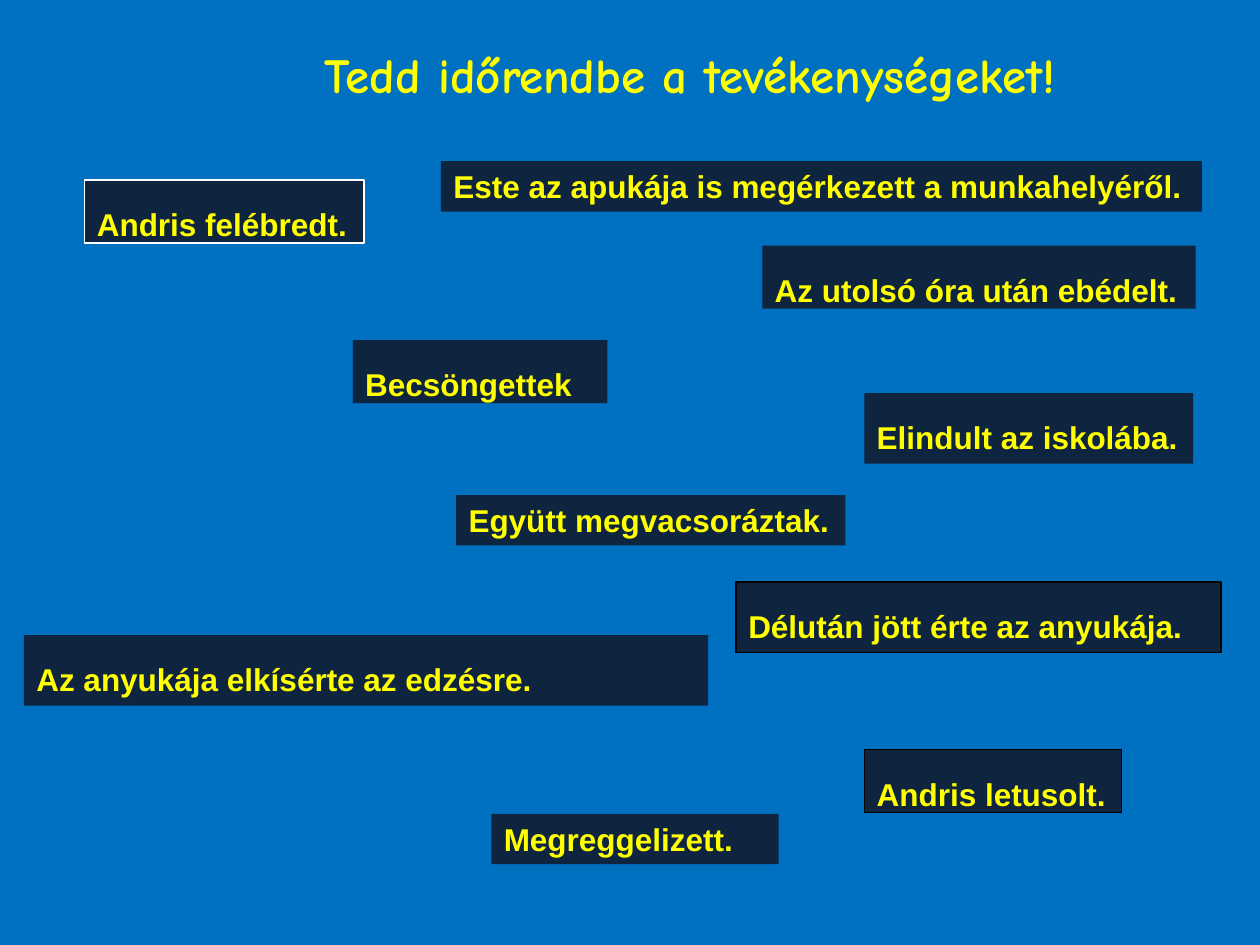
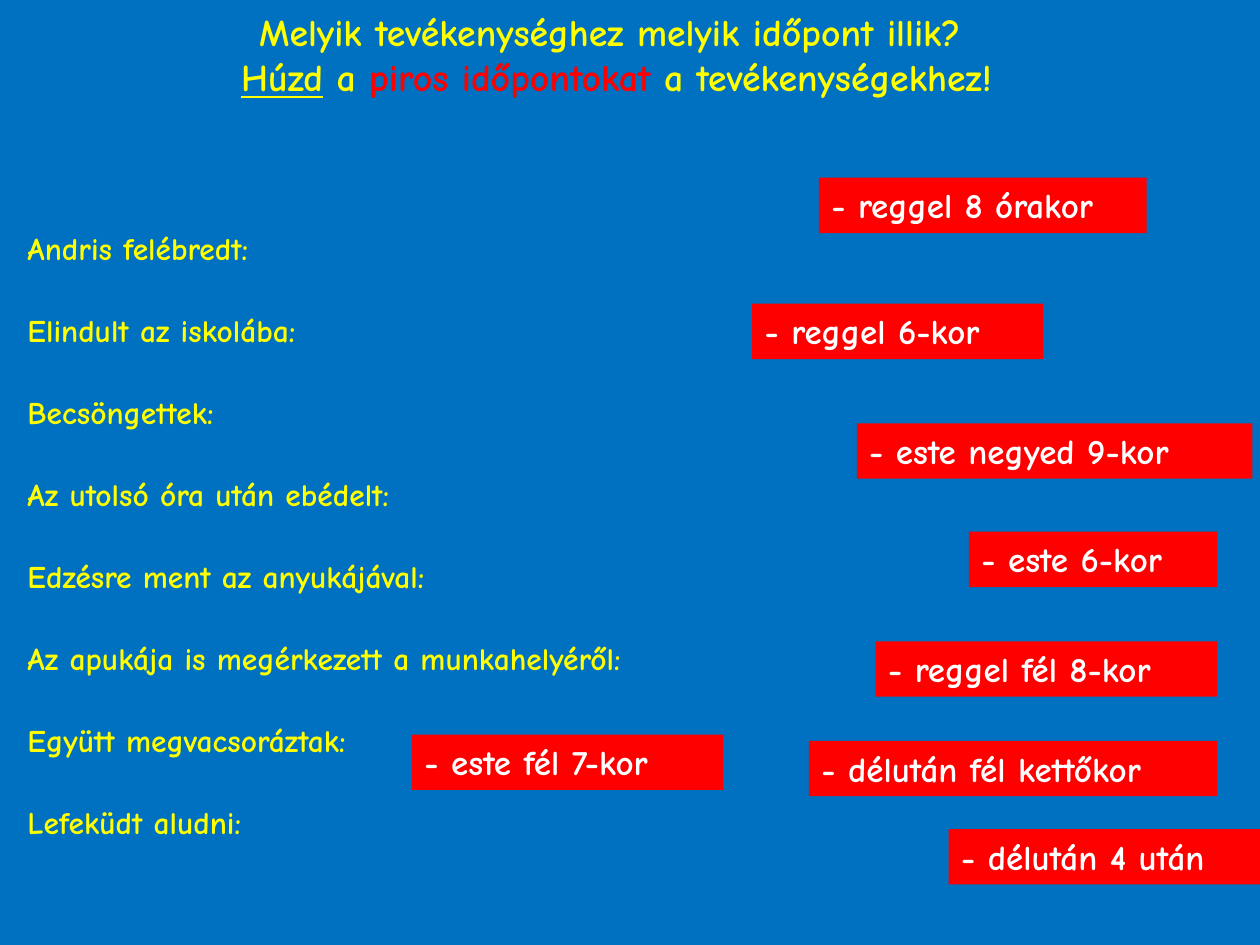
"""Build two slides about ordering and timing Andris's day."""
from pptx import Presentation
from pptx.dml.color import RGBColor
from pptx.enum.shapes import MSO_SHAPE as Shape
from pptx.enum.text import MSO_ANCHOR as Anchor, PP_ALIGN as Align
from pptx.util import Inches, Pt

BLUE = RGBColor(0x00, 0x70, 0xC0)
NAVY = RGBColor(0x0F, 0x24, 0x3E)
YELLOW = RGBColor(0xFF, 0xFF, 0x00)
RED = RGBColor(0xFF, 0x00, 0x00)
WHITE = RGBColor(0xFF, 0xFF, 0xFF)
BLACK = RGBColor(0x00, 0x00, 0x00)
SANS, COMIC = "Arial", "Comic Neue"

ORDER_TITLE = [[("Tedd időrendbe a tevékenységeket!", YELLOW, False)]]
TIME_TITLE = [
    [("Melyik tevékenységhez melyik időpont illik?", YELLOW, False)],
    [(" ", YELLOW, False), ("Húzd", YELLOW, True), (" a ", YELLOW, False),
     ("piros időpontokat", RED, False), (" a tevékenységekhez!", YELLOW, False)],
]

# text, left, top, width, height, line spacing, outline
ACTIVITY_CARDS = [
    ("Becsöngettek", 2.8, 2.7, 2.02, 0.5, 1.5, None),
    ("Az utolsó óra után ebédelt.", 6.05, 1.95, 3.44, 0.5, 1.5, None),
    ("Este az apukája is megérkezett a munkahelyéről.", 3.5, 1.28, 6.04, 0.4, 1, None),
    ("Elindult az iskolába.", 6.86, 3.12, 2.61, 0.56, 1.5, None),
    ("Az anyukája elkísérte az edzésre.", 0.19, 5.04, 5.43, 0.56, 1.5, None),
    ("Andris felébredt.", 0.67, 1.43, 2.22, 0.5, 1.5, WHITE),
    ("Andris letusolt.", 6.86, 5.95, 2.04, 0.5, 1.5, BLACK),
    ("Megreggelizett.", 3.9, 6.46, 2.28, 0.4, 1, None),
    ("Délután jött érte az anyukája.", 5.84, 4.62, 3.85, 0.56, 1.5, BLACK),
    ("Együtt megvacsoráztak.", 3.62, 3.93, 3.09, 0.4, 1, None),
]

ACTIVITIES = [
    "Andris felébredt:",
    "Elindult az iskolába:",
    "Becsöngettek:",
    "Az utolsó óra után ebédelt:",
    "Edzésre ment az anyukájával:",
    "Az apukája is megérkezett a munkahelyéről:",
    "Együtt megvacsoráztak:",
    "Lefeküdt aludni:",
]

# text, left, top, width
TIME_CARDS = [
    ("- este negyed 9-kor", 6.8, 3.36, 3.14),
    ("- reggel 6-kor", 5.97, 2.41, 2.31),
    ("- este fél 7-kor", 3.27, 5.83, 2.47),
    ("- reggel 8 órakor", 6.5, 1.41, 2.6),
    ("- este 6-kor", 7.69, 4.22, 1.97),
    ("- délután 4 után", 7.53, 6.58, 2.47),
    ("- reggel fél 8-kor", 6.95, 5.09, 2.71),
    ("- délután fél kettőkor", 6.42, 5.88, 3.24),
]
TIME_CARD_HEIGHT = 0.44


def style(font, name, size, color=None):
    font.name, font.size, font.bold = name, Pt(size), True
    if color is not None:
        font.color.rgb = color


def add_page(deck):
    page = deck.slides.add_slide(deck.slide_layouts[6])
    page.background.fill.solid()
    page.background.fill.fore_color.rgb = BLUE
    return page


def add_title(page, lines, place, size, bottom_margin=0.05):
    frame = page.shapes.add_textbox(*map(Inches, place)).text_frame
    frame.word_wrap = True
    frame.vertical_anchor = Anchor.MIDDLE
    frame.margin_bottom = Inches(bottom_margin)
    para = frame.paragraphs[0]
    para.alignment = Align.CENTER
    style(para.font, COMIC, size)
    for number, line in enumerate(lines):
        if number:
            para.add_line_break()
        for text, color, underlined in line:
            span = para.add_run()
            span.text = text
            style(span.font, COMIC, size, color)
            span.font.underline = underlined


def add_card(page, text, place, fill, font, spacing=1, outline=None):
    box = page.shapes.add_shape(Shape.RECTANGLE, *map(Inches, place))
    box.shadow.inherit = False
    box.fill.solid()
    box.fill.fore_color.rgb = fill
    if outline is None:
        box.line.fill.background()
    else:
        box.line.color.rgb = outline
        box.line.width = Pt(0.75)
    frame = box.text_frame
    frame.word_wrap = True
    frame.vertical_anchor = Anchor.TOP
    para = frame.paragraphs[0]
    para.text = text
    para.alignment = Align.LEFT
    para.line_spacing = spacing
    style(para.font, *font)


def add_activity_list(page):
    place = (0.12, 1.12, 6.3, 6.25)
    frame = page.shapes.add_textbox(*map(Inches, place)).text_frame
    frame.word_wrap = True
    frame.margin_top = Inches(0.4)
    for number, text in enumerate(ACTIVITIES):
        para = frame.add_paragraph() if number else frame.paragraphs[0]
        para.text = text
        para.line_spacing = 2.0
        para.space_before = Pt(3.6)
        style(para.font, COMIC, 18, YELLOW)


def main():
    deck = Presentation()
    deck.slide_width, deck.slide_height = Inches(10), Inches(7.5)

    order_page = add_page(deck)
    add_title(order_page, ORDER_TITLE, (1.46, 0.13, 8.03, 0.91), 28)
    for text, *place, spacing, outline in ACTIVITY_CARDS:
        add_card(order_page, text, place, NAVY, (SANS, 18, YELLOW), spacing, outline)

    time_page = add_page(deck)
    add_title(time_page, TIME_TITLE, (0.59, 0.13, 8.5, 0.94), 21.6, 0.39)
    add_activity_list(time_page)
    for text, *place in TIME_CARDS:
        add_card(time_page, text, (*place, TIME_CARD_HEIGHT), RED, (COMIC, 20, WHITE))

    deck.save("out.pptx")


if __name__ == "__main__":
    main()
